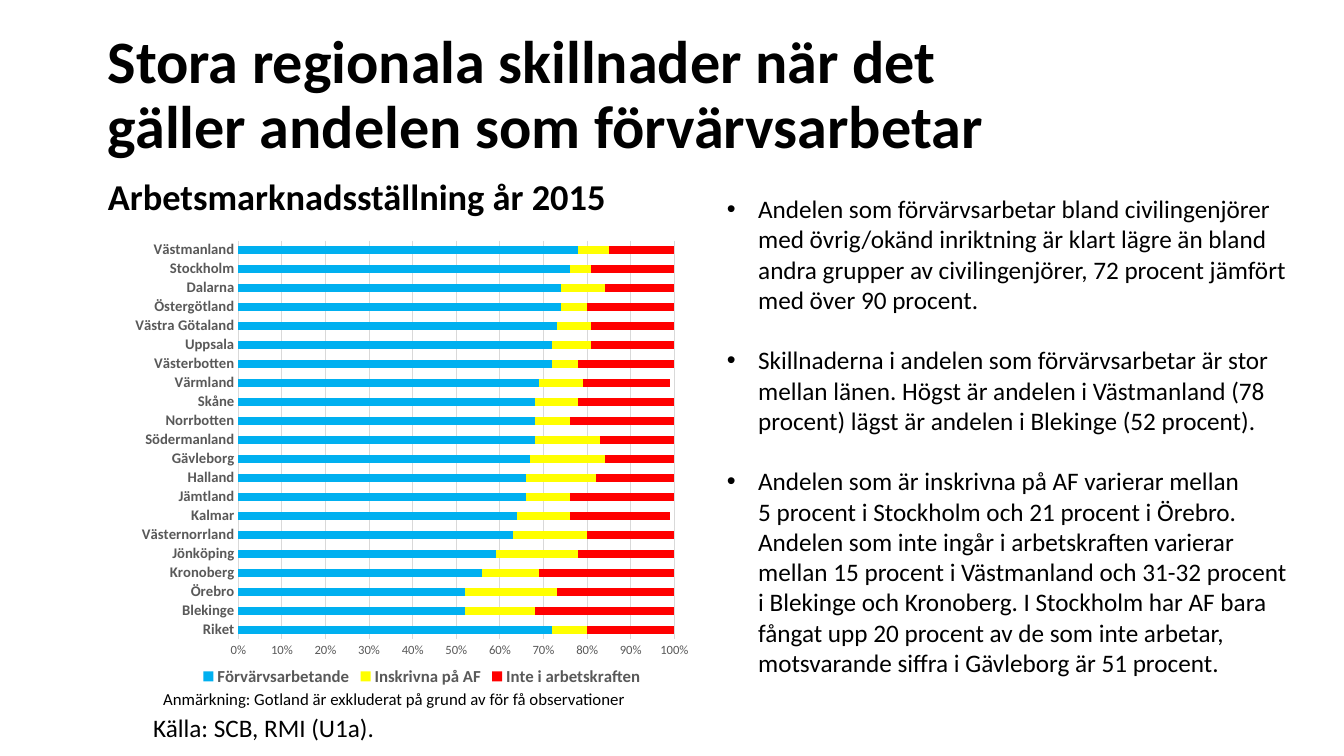
import pptx
import pptx.chart.data
import pptx.dml.color
import pptx.enum.chart
import pptx.enum.text
import pptx.oxml
import pptx.oxml.ns
import pptx.util
from lxml import etree

Inches = pptx.util.Inches
Pt = pptx.util.Pt
RGBColor = pptx.dml.color.RGBColor
qn = pptx.oxml.ns.qn

BLACK = RGBColor(0x00, 0x00, 0x00)
AXIS_GREY = RGBColor(0x59, 0x59, 0x59)
GRID_GREY = RGBColor(0xD9, 0xD9, 0xD9)
EMPLOYED_BLUE = RGBColor(0x00, 0xB0, 0xF0)
REGISTERED_YELLOW = RGBColor(0xFF, 0xFF, 0x00)
OUTSIDE_RED = RGBColor(0xFF, 0x00, 0x00)

HEADING = "Stora regionala skillnader när det gäller andelen som förvärvsarbetar"
SUBHEADING = "Arbetsmarknadsställning år 2015"
FINDINGS = [
    "Andelen som förvärvsarbetar bland civilingenjörer med övrig/okänd inriktning "
    "är klart lägre än bland andra grupper av civilingenjörer, 72 procent jämfört "
    "med över 90 procent.",
    "Skillnaderna i andelen som förvärvsarbetar är stor mellan länen. Högst är "
    "andelen i Västmanland (78 procent) lägst är andelen i Blekinge (52 procent).",
    "Andelen som är inskrivna på AF varierar mellan\v5 procent i Stockholm och "
    "21 procent i Örebro. Andelen som inte ingår i arbetskraften varierar mellan "
    "15 procent i Västmanland och 31-32 procent i Blekinge och Kronoberg. I Stockholm "
    "har AF bara fångat upp 20 procent av de som inte arbetar, motsvarande siffra i "
    "Gävleborg är 51 procent.",
]
NOTE = "Anmärkning: Gotland är exkluderat på grund av för få observationer"
SOURCE = "Källa: SCB, RMI (U1a)."

STATUSES = {
    "Förvärvsarbetande": EMPLOYED_BLUE,
    "Inskrivna på AF": REGISTERED_YELLOW,
    "Inte i arbetskraften": OUTSIDE_RED,
}
COUNTIES = {
    "Riket": (0.72, 0.08, 0.2),
    "Blekinge": (0.52, 0.16, 0.32),
    "Örebro": (0.52, 0.21, 0.27),
    "Kronoberg": (0.56, 0.13, 0.31),
    "Jönköping": (0.59, 0.19, 0.22),
    "Västernorrland": (0.63, 0.17, 0.2),
    "Kalmar": (0.64, 0.12, 0.23),
    "Jämtland": (0.66, 0.1, 0.24),
    "Halland": (0.66, 0.16, 0.18),
    "Gävleborg": (0.67, 0.17, 0.16),
    "Södermanland": (0.68, 0.15, 0.17),
    "Norrbotten": (0.68, 0.08, 0.24),
    "Skåne": (0.68, 0.1, 0.22),
    "Värmland": (0.69, 0.1, 0.2),
    "Västerbotten": (0.72, 0.06, 0.22),
    "Uppsala": (0.72, 0.09, 0.19),
    "Västra Götaland": (0.73, 0.08, 0.2),
    "Östergötland": (0.74, 0.06, 0.2),
    "Dalarna": (0.74, 0.1, 0.16),
    "Stockholm": (0.76, 0.05, 0.19),
    "Västmanland": (0.78, 0.07, 0.15),
}


class SlideBuilder:
    """Holds the text style and the slide being built."""

    font_name = "Calibri"

    def __init__(self, slide):
        self.slide = slide

    def apply(self, target, values):
        for name, value in values.items():
            setattr(target, name, value)

    def style_font(self, font, size, color=BLACK, bold=False):
        self.apply(font, {"name": self.font_name, "size": Pt(size), "bold": bold})
        font.color.rgb = color

    def place(self, shape, left, top, width, height):
        self.apply(shape, {"left": Inches(left), "top": Inches(top),
                           "width": Inches(width), "height": Inches(height)})

    def fill_text(self, frame, texts, size, bold=False, gap=0, line_spacing=1.0, bullet=None):
        for index, text in enumerate(texts):
            paragraph = frame.paragraphs[0] if index == 0 else frame.add_paragraph()
            paragraph.text = text
            properties = paragraph._p.get_or_add_pPr()
            indent = Inches(0.31) if bullet else 0
            properties.set("marL", str(indent))
            properties.set("indent", str(-indent))
            mark = etree.SubElement(properties, qn("a:buChar" if bullet else "a:buNone"))
            if bullet:
                mark.set("char", bullet)
            self.apply(paragraph, {"alignment": pptx.enum.text.PP_ALIGN.LEFT,
                                   "line_spacing": line_spacing,
                                   "space_before": Pt(gap if index else 0),
                                   "space_after": Pt(0)})
            for run in paragraph.runs:
                self.style_font(run.font, size, bold=bold)
            # Line breaks take the text size too
            for line_break in paragraph._p.findall(qn("a:br")):
                etree.SubElement(line_break, qn("a:rPr")).set("sz", str(size * 100))

    def placeholder(self, index, box, texts, size, margins=(0, 0),
                    anchor=pptx.enum.text.MSO_ANCHOR.TOP, **style):
        shape = self.slide.placeholders[index]
        self.place(shape, *box)
        side, edge = map(Inches, margins)
        self.apply(shape.text_frame, {
            "margin_left": side, "margin_right": side,
            "margin_top": edge, "margin_bottom": edge,
            "vertical_anchor": anchor, "word_wrap": True,
            "auto_size": pptx.enum.text.MSO_AUTO_SIZE.NONE})
        self.fill_text(shape.text_frame, texts, size, **style)

    def caption(self, box, text, size, wrap=True):
        frame = self.slide.shapes.add_textbox(*map(Inches, box)).text_frame
        frame.word_wrap = wrap
        self.fill_text(frame, [text], size)

    def stacked_bars(self, box, rows, series_colors, plot_area):
        data = pptx.chart.data.CategoryChartData(number_format="0%")
        data.categories = list(rows)
        for name, shares in zip(series_colors, zip(*rows.values())):
            data.add_series(name, shares)
        chart = self.slide.shapes.add_chart(
            pptx.enum.chart.XL_CHART_TYPE.BAR_STACKED, *map(Inches, box), data).chart
        self.style_font(chart.font, 10)
        self.apply(chart, {"has_title": False, "has_legend": True})
        self.apply(chart.legend, {"position": pptx.enum.chart.XL_LEGEND_POSITION.BOTTOM,
                                  "include_in_layout": False})
        self.style_font(chart.legend.font, 12, AXIS_GREY, True)

        # Bars
        bars = chart.plots[0]
        self.apply(bars, {"gap_width": 150, "overlap": 100, "vary_by_categories": False})
        for series, color in zip(bars.series, series_colors.values()):
            series.format.fill.solid()
            series.format.fill.fore_color.rgb = color

        # Axes
        no_tick = pptx.enum.chart.XL_TICK_MARK.NONE
        counties, shares = chart.category_axis, chart.value_axis
        for axis in (counties, shares):
            self.apply(axis, {"major_tick_mark": no_tick, "minor_tick_mark": no_tick})
        self.apply(shares, {"minimum_scale": 0, "maximum_scale": 1, "major_unit": 0.1,
                            "has_major_gridlines": True})
        self.apply(shares.tick_labels, {"number_format": "0%",
                                        "number_format_is_linked": False})
        self.style_font(counties.tick_labels.font, 10.5, AXIS_GREY, True)
        self.style_font(shares.tick_labels.font, 9, AXIS_GREY)
        shares.format.line.fill.background()
        for line in (counties.format.line, shares.major_gridlines.format.line):
            line.color.rgb = GRID_GREY
            line.width = Pt(0.75)

        # Fixed inner plot area
        area = chart._chartSpace.chart.plotArea
        for old_layout in area.findall(qn("c:layout")):
            area.remove(old_layout)
        layout = etree.Element(qn("c:layout"))
        manual = etree.SubElement(layout, qn("c:manualLayout"))
        settings = {"layoutTarget": "inner", "xMode": "edge", "yMode": "edge",
                    **dict(zip("xywh", plot_area))}
        for tag, value in settings.items():
            etree.SubElement(manual, qn("c:" + tag)).set("val", str(value))
        area.insert(0, layout)


def main():
    deck = pptx.Presentation()
    deck.slide_width, deck.slide_height = Inches(13.33), Inches(7.5)
    builder = SlideBuilder(deck.slides.add_slide(deck.slide_layouts[3]))

    # Headings
    builder.placeholder(0, (1.07, 0.46, 9.4, 1.14), [HEADING], 43, bold=True,
                        line_spacing=0.9, anchor=pptx.enum.text.MSO_ANCHOR.BOTTOM)
    builder.placeholder(1, (1.07, 1.73, 9.4, 0.52), [SUBHEADING], 26, bold=True)

    # Labour market status by county
    builder.stacked_bars((1.34, 2.25, 5.69, 4.6), COUNTIES, STATUSES,
                         (0.18, 0.03, 0.76, 0.86))

    # Findings
    builder.placeholder(2, (7.11, 1.87, 5.79, 5.25), FINDINGS, 18, margins=(0.1, 0.05),
                        gap=21.6, bullet="•")

    # Note and source
    builder.caption((1.52, 6.78, 5.35, 0.3), NOTE, 12)
    builder.caption((1.42, 7.02, 2.42, 0.4), SOURCE, 18, wrap=False)

    deck.save("out.pptx")


if __name__ == "__main__":
    main()
